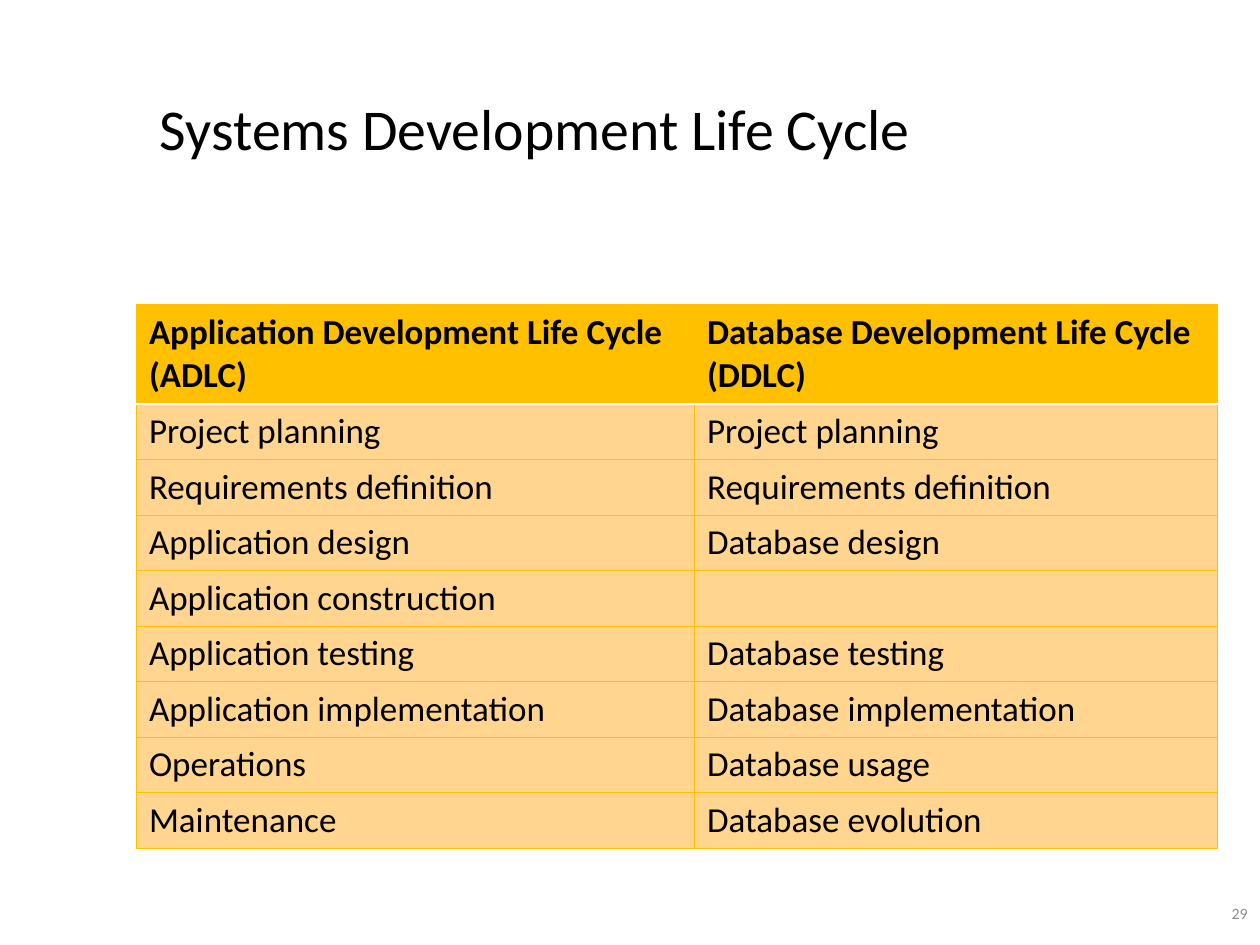
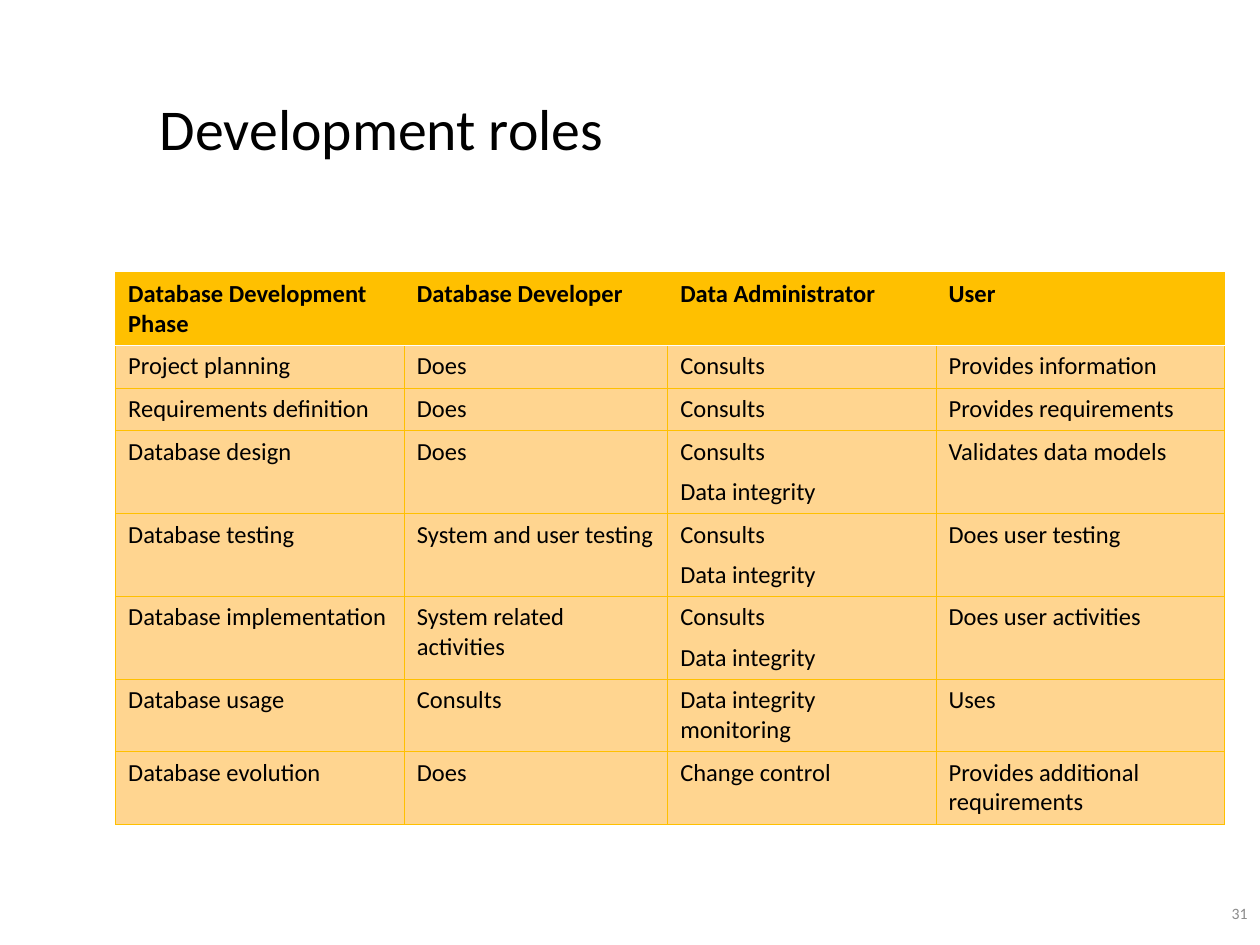
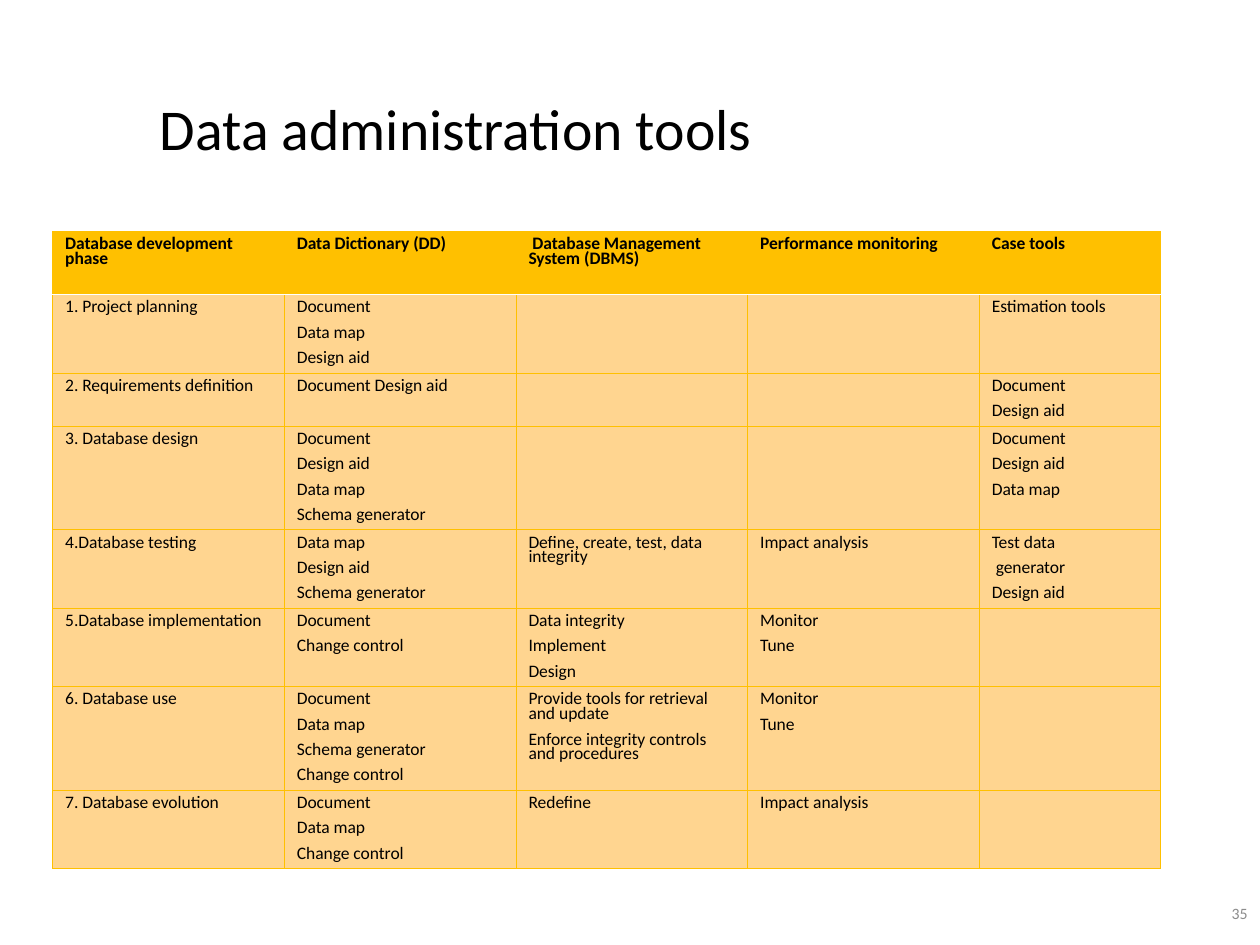
import dataclasses

import lxml.etree
import pptx
import pptx.dml.color
import pptx.enum.text
import pptx.oxml.ns
import pptx.util

Cm = pptx.util.Cm
Pt = pptx.util.Pt
ALIGN = pptx.enum.text.PP_ALIGN
MIDDLE = pptx.enum.text.MSO_ANCHOR.MIDDLE


@dataclasses.dataclass(frozen=True)
class Theme:
    """Colours, type sizes and fixed places shared by the slides."""
    face: str = "Calibri"
    ink: str = "000000"
    grey: str = "8C8C8C"
    gold: str = "FFC000"
    sand: str = "FFD590"
    white: str = "FFFFFF"
    title: float = 33
    page: float = 9
    large: float = 20
    mid: float = 14
    small: float = 10
    head_box: tuple = (2.97, 1.06, 21.59, 3.18)
    page_box: tuple = (23.06, 17.78, 2.34, 1.27)


THEME = Theme()

CYCLE = [
    ["Application Development Life Cycle (ADLC)", "Database Development Life Cycle (DDLC)"],
    ["Project planning", "Project planning"],
    ["Requirements definition", "Requirements definition"],
    ["Application design", "Database design"],
    ["Application construction", ""],
    ["Application testing", "Database testing"],
    ["Application implementation", "Database implementation"],
    ["Operations", "Database usage"],
    ["Maintenance", "Database evolution"],
]

ROLES = [
    ["Database Development Phase", "Database Developer", "Data Administrator", "User"],
    ["Project planning", "Does", "Consults", "Provides information"],
    ["Requirements definition", "Does", "Consults", "Provides requirements"],
    ["Database design", "Does", "Consults\nData integrity", "Validates data models"],
    ["Database testing", "System and user testing", "Consults\nData integrity",
     "Does user testing"],
    ["Database implementation", "System related activities", "Consults\nData integrity",
     "Does user activities"],
    ["Database usage", "Consults", "Data integrity monitoring", "Uses"],
    ["Database evolution", "Does", "Change control", "Provides additional requirements"],
]

TOOLS = [
    ["Database development phase", "Data Dictionary (DD)",
     " Database Management System (DBMS)", "Performance monitoring", "Case tools"],
    ["1. Project planning", "Document\nData map\nDesign aid", "", "", "Estimation tools"],
    ["2. Requirements definition", "Document Design aid", "", "", "Document\nDesign aid"],
    ["3. Database design", "Document\nDesign aid\nData map\nSchema generator", "", "",
     "Document\nDesign aid\nData map"],
    ["4.Database testing", "Data map\nDesign aid\nSchema generator",
     "Define, create, test, data integrity", "Impact analysis",
     "Test data\n generator\nDesign aid"],
    ["5.Database implementation", "Document\nChange control",
     "Data integrity\nImplement\nDesign", "Monitor\nTune", ""],
    ["6. Database use", "Document\nData map\nSchema generator\nChange control",
     "Provide tools for retrieval and update\nEnforce integrity controls and procedures",
     "Monitor\nTune", ""],
    ["7. Database evolution", "Document\nData map\nChange control", "Redefine",
     "Impact analysis", ""],
]


def apply(item, form):
    """Set each attribute named in a format dict."""
    for name, value in form.items():
        setattr(item, name, value)


def place(box):
    """Turn a box in centimetres into named lengths."""
    return dict(zip(("left", "top", "width", "height"), map(Cm, box)))


def rgb(tone):
    """Make a colour from its hex form."""
    return pptx.dml.color.RGBColor.from_string(tone)


def write(frame, text, size, tone=THEME.ink, bold=False, **form):
    """Fill a text frame, one paragraph for each line."""
    frame.text = text
    for para in frame.paragraphs:
        apply(para, form)
        for run in para.runs:
            apply(run.font, {"name": THEME.face, "size": Pt(size), "bold": bold})
            run.font.color.rgb = rgb(tone)


def edge(cell, rules):
    """Draw the four cell borders from (side, colour, points) rules."""
    props = cell._tc.get_or_add_tcPr()
    for spot, (side, tone, width) in enumerate(rules):
        line = lxml.etree.Element(pptx.oxml.ns.qn("a:ln" + side), w=str(Pt(width)))
        fill = lxml.etree.SubElement(line, pptx.oxml.ns.qn("a:solidFill"))
        lxml.etree.SubElement(fill, pptx.oxml.ns.qn("a:srgbClr"), val=tone)
        props.insert(spot, line)


def paint(cell, row):
    """Give a cell the fill and borders of its row."""
    cell.fill.solid()
    cell.fill.fore_color.rgb = rgb(THEME.sand if row else THEME.gold)
    thin, rule = (THEME.gold, 0.5), (THEME.white, 1)
    edge(cell, [("L", *thin), ("R", *thin),
                ("T", *(rule if row == 1 else thin)),
                ("B", *(thin if row else rule))])


def grid(slide, data, spot, wide, tall, size, lead=1.0):
    """Add a table with a gold head and sand body."""
    box = place((*spot, sum(wide), sum(tall)))
    table = slide.shapes.add_table(len(data), len(wide), **box).table
    table.horz_banding = False
    for col, width in zip(table.columns, wide):
        col.width = Cm(width)
    for row, height in zip(table.rows, tall):
        row.height = Cm(height)
    form = {"line_spacing": lead, "space_before": Pt(3), "space_after": Pt(3)}
    for r, texts in enumerate(data):
        for c, text in enumerate(texts):
            cell = table.cell(r, c)
            write(cell.text_frame, text, size, bold=r == 0, **form)
            paint(cell, r)


def start(deck, title, page):
    """Add a slide with its title and page number."""
    slide = deck.slides.add_slide(deck.slide_layouts[5])
    head = slide.shapes.title
    apply(head, place(THEME.head_box))
    write(head.text_frame, title, THEME.title, alignment=ALIGN.LEFT, line_spacing=0.9)
    foot = slide.shapes.add_textbox(**place(THEME.page_box))
    write(foot.text_frame, page, THEME.page, THEME.grey, alignment=ALIGN.RIGHT)
    for shape in (head, foot):
        apply(shape.text_frame, {"word_wrap": True, "vertical_anchor": MIDDLE})
    return slide


def main():
    """Build and save the deck."""
    deck = pptx.Presentation()
    apply(deck, {"slide_width": Cm(25.4), "slide_height": Cm(19.05)})

    slide = start(deck, "Systems Development Life Cycle", "29")
    grid(slide, CYCLE, (2.75, 6.14), [11.25, 10.54], [2] + [1.12] * 8, THEME.large)

    slide = start(deck, "Development roles", "31")
    grid(slide, ROLES, (2.33, 5.5), [5.82, 5.31, 5.41, 5.82],
         [1.46] + [0.86] * 2 + [1.67] * 3 + [1.46] * 2, THEME.mid)

    slide = start(deck, "Data administration tools", "35")
    lines = [max(text.count("\n") + 1 for text in row) for row in TOOLS[1:]]
    grid(slide, TOOLS, (1.06, 4.67), [4.67] * 4 + [3.66],
         [1.27] + [0.05 + 0.51 * count for count in lines], THEME.small, 0.7)

    deck.save("out.pptx")


if __name__ == "__main__":
    main()
